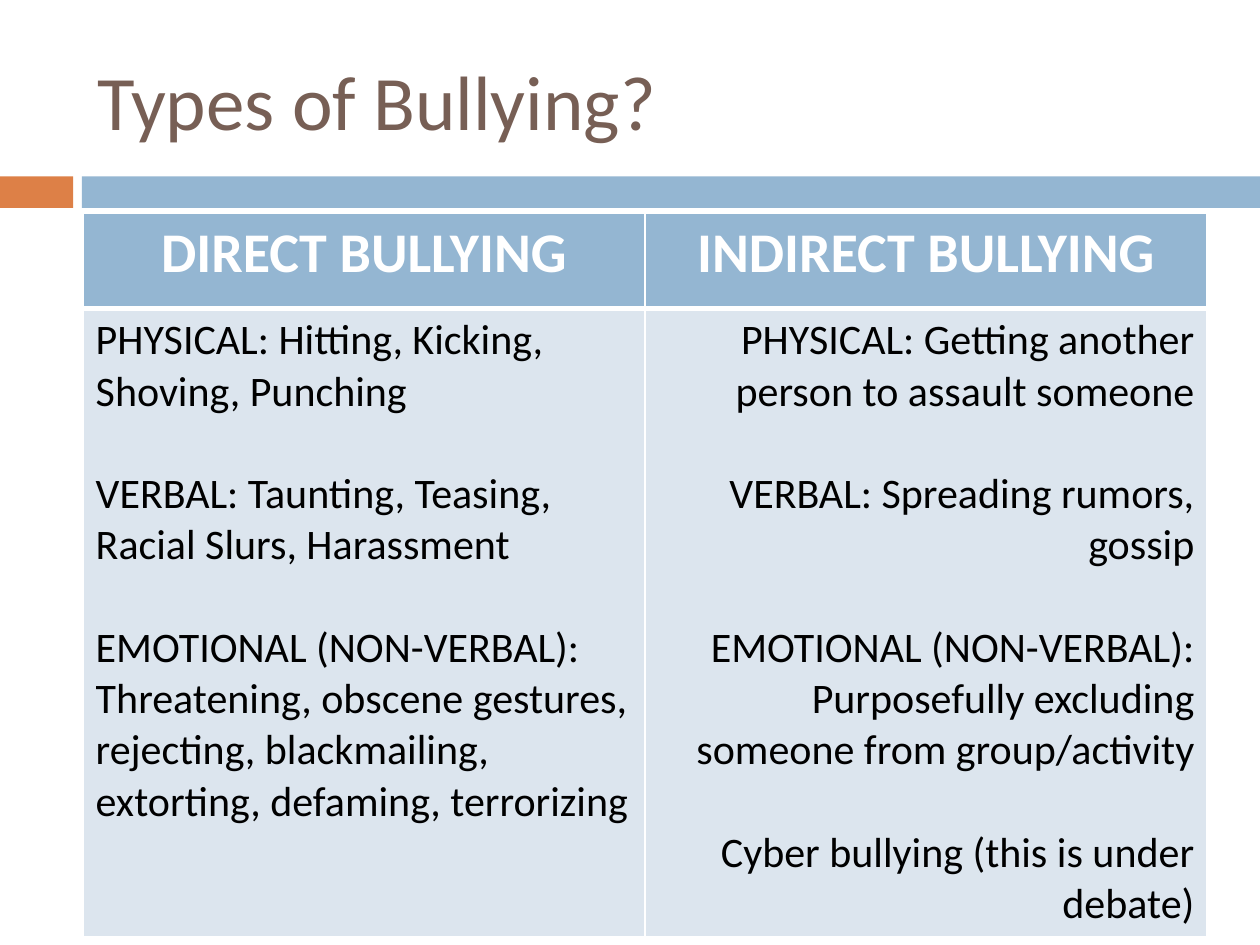
import pptx
import pptx.util
import pptx.dml.color
import pptx.enum.shapes
import pptx.enum.text
import pptx.oxml
import pptx.oxml.ns

Inches, Pt = pptx.util.Inches, pptx.util.Pt
RGBColor = pptx.dml.color.RGBColor
ALIGN = pptx.enum.text.PP_ALIGN

ORANGE = RGBColor(0xDD, 0x80, 0x47)
BLUE = RGBColor(0x94, 0xB6, 0xD2)
PALE = RGBColor(0xDC, 0xE5, 0xEE)
BROWN = RGBColor(0x77, 0x5F, 0x55)
WHITE = RGBColor(0xFF, 0xFF, 0xFF)
BLACK = RGBColor(0, 0, 0)

WIDTH, HEIGHT = 10, 7.5
BAND_TOP, BAND_HEIGHT = 1.4, 0.25
BANDS = [(0, 0.58, ORANGE), (0.65, WIDTH - 0.65, BLUE)]
TABLE_LEFT, TABLE_TOP, TABLE_WIDTH = 0.66, 1.69, 8.92
ROW_HEIGHTS = [0.76, 4.9]
GROUP_GAP = 29.3

TITLE = "Types of Bullying?"
COLUMNS = [
    {
        "heading": "DIRECT BULLYING",
        "align": ALIGN.LEFT,
        "groups": [
            ["PHYSICAL: Hitting, Kicking, Shoving, Punching"],
            ["VERBAL: Taunting, Teasing, Racial Slurs, Harassment"],
            ["EMOTIONAL (NON-VERBAL): Threatening, obscene gestures, "
             "rejecting, blackmailing, extorting, defaming, terrorizing"],
        ],
    },
    {
        "heading": "INDIRECT BULLYING",
        "align": ALIGN.RIGHT,
        "groups": [
            ["PHYSICAL: Getting another person to assault someone"],
            ["VERBAL: Spreading rumors, gossip"],
            ["EMOTIONAL (NON-VERBAL):",
             "Purposefully excluding someone from group/activity"],
            ["Cyber bullying (this is under debate)"],
        ],
    },
]


def write(frame, groups, size, color, align=ALIGN.LEFT, bold=False):
    first = True
    for group in groups:
        for index, text in enumerate(group):
            para = frame.paragraphs[0] if first else frame.add_paragraph()
            para.alignment = align
            para.space_before = Pt(GROUP_GAP if index == 0 and not first else 0)
            span = para.add_run()
            span.text = text
            span.font.name = "Calibri"
            span.font.size = Pt(size)
            span.font.bold = bold
            span.font.color.rgb = color
            first = False


def style_cell(cell, fill, top, bottom):
    properties = cell._tc.get_or_add_tcPr()
    for side, width in (("L", 1), ("R", 1), ("T", top), ("B", bottom)):
        properties.append(pptx.oxml.parse_xml(
            f'<a:ln{side} {pptx.oxml.ns.nsdecls("a")} w="{Pt(width)}">'
            f'<a:solidFill><a:srgbClr val="{WHITE}"/></a:solidFill></a:ln{side}>'))
    cell.fill.solid()
    cell.fill.fore_color.rgb = fill


def main():
    deck = pptx.Presentation()
    deck.slide_width, deck.slide_height = Inches(WIDTH), Inches(HEIGHT)
    page = deck.slides.add_slide(deck.slide_layouts[5])

    title = page.shapes.title
    title.left, title.top = Inches(0.67), Inches(0.25)
    title.width, title.height = Inches(8.92), Inches(1.08)
    title.text_frame.vertical_anchor = pptx.enum.text.MSO_ANCHOR.MIDDLE
    write(title.text_frame, [[TITLE]], 44, BROWN)

    for left, width, color in BANDS:
        band = page.shapes.add_shape(
            pptx.enum.shapes.MSO_SHAPE.RECTANGLE,
            Inches(left), Inches(BAND_TOP), Inches(width), Inches(BAND_HEIGHT))
        band.shadow.inherit = False
        band.fill.solid()
        band.fill.fore_color.rgb = color
        band.line.fill.background()

    table = page.shapes.add_table(
        len(ROW_HEIGHTS), len(COLUMNS), Inches(TABLE_LEFT), Inches(TABLE_TOP),
        Inches(TABLE_WIDTH), Inches(sum(ROW_HEIGHTS))).table
    for row, height in zip(table.rows, ROW_HEIGHTS):
        row.height = Inches(height)
    for index, column in enumerate(COLUMNS):
        table.columns[index].width = Inches(TABLE_WIDTH / len(COLUMNS))
        heading, body = table.cell(0, index), table.cell(1, index)
        style_cell(heading, BLUE, top=1, bottom=3)
        style_cell(body, PALE, top=3, bottom=1)
        write(heading.text_frame, [[column["heading"]]], 32, WHITE,
              align=ALIGN.CENTER, bold=True)
        write(body.text_frame, column["groups"], 24, BLACK, align=column["align"])

    deck.save("out.pptx")


if __name__ == "__main__":
    main()
